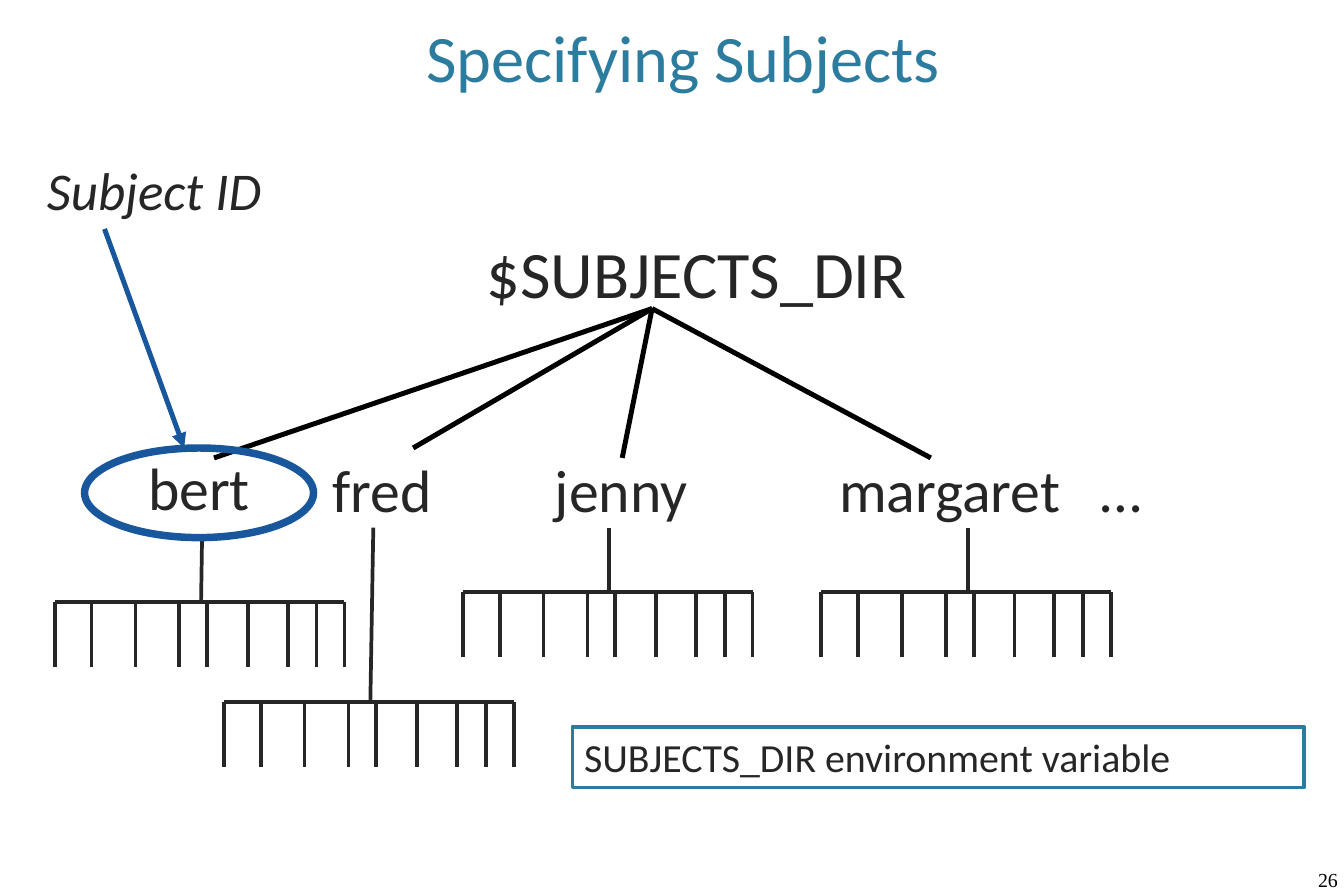
from dataclasses import dataclass

from lxml.etree import SubElement
from pptx import Presentation
from pptx.dml.color import RGBColor as RGB
from pptx.enum.shapes import MSO_CONNECTOR as LINK, MSO_SHAPE as SHAPE
from pptx.enum.text import MSO_ANCHOR as ANCHOR, PP_ALIGN as ALIGN
from pptx.oxml.ns import qn
from pptx.util import Pt


@dataclass(frozen=True)
class Theme:
    font: str = "Calibri"
    serif: str = "Times New Roman"
    ink: str = "262626"
    black: str = "000000"
    teal: str = "2C7C9F"
    blue: str = "18579B"
    head: int = 40
    name: int = 36
    label: int = 32
    note: int = 24
    page: int = 12


theme = Theme()
PX = 7620

deck = Presentation()
deck.slide_width, deck.slide_height = 1350 * PX, 900 * PX
slide = deck.slides.add_slide(deck.slide_layouts[6])
shapes = slide.shapes


def write(text, box=None, frame=None, size=theme.name, color=theme.ink,
          font=theme.font, align=ALIGN.CENTER, italic=False, pad=(0, 0)):
    if frame is None:
        frame = shapes.add_textbox(*[n * PX for n in box]).text_frame
    frame.word_wrap = True
    frame.vertical_anchor = ANCHOR.TOP
    frame.margin_left = frame.margin_right = pad[0] * PX
    frame.margin_top = frame.margin_bottom = pad[1] * PX
    para = frame.paragraphs[0]
    para.alignment = align
    run = para.add_run()
    run.text = text
    run.font.size = Pt(size)
    run.font.name = font
    run.font.italic = italic
    run.font.color.rgb = RGB.from_string(color)


def draw(x1, y1, x2, y2, color=theme.ink, width=2.25):
    link = shapes.add_connector(LINK.STRAIGHT, x1 * PX, y1 * PX, x2 * PX, y2 * PX)
    link.line.color.rgb = RGB.from_string(color)
    link.line.width = Pt(width)
    SubElement(link._element.spPr, qn("a:effectLst"))
    return link


write("26", (1324, 871, 26, 25), size=theme.page, color=theme.black,
      font=theme.serif, align=ALIGN.LEFT)
write("Specifying Subjects", (236, 16, 900, 82), size=theme.head, color=theme.teal)
write("$SUBJECTS_DIR", (395, 233, 610, 82), size=theme.head)

names = [("bert", 200, 453), ("fred", 384, 455), ("jenny", 624, 455),
         ("margaret   …", 995, 455)]
for name, mid, top in names:
    write(name, (mid - 200, top, 400, 74))

for x, y in [(215, 460), (415, 450), (625, 460), (935, 460)]:
    draw(655, 310, x, y, theme.black, 3)

ticks = [0, 37, 81, 125, 153, 194, 234, 263, 291]
trees = [(55, 605, 203, 540), (465, 595, 612, 530),
         (825, 595, 972, 530), (225, 705, 375, 530)]
for left, bar, x, y in trees:
    draw(x, y, left + 147, bar)
    draw(left, bar, left + ticks[-1], bar)
    for tick in ticks:
        draw(left + tick, bar, left + tick, bar + 65)

ring = shapes.add_shape(SHAPE.OVAL, 85 * PX, 450 * PX, 230 * PX, 90 * PX)
frame = shapes.add_shape(SHAPE.RECTANGLE, 575 * PX, 730 * PX, 735 * PX, 61 * PX)
for shape, color, width in [(ring, theme.blue, 4.5), (frame, theme.teal, 2.25)]:
    shape.shadow.inherit = False
    shape.fill.background()
    shape.line.color.rgb = RGB.from_string(color)
    shape.line.width = Pt(width)

write("SUBJECTS_DIR environment variable", frame=frame.text_frame,
      size=theme.note, align=ALIGN.LEFT, pad=(12, 6))

arrow = draw(105, 230, 185, 450, theme.blue, 3)
SubElement(arrow.line._get_or_add_ln(), qn("a:tailEnd"), type="triangle")
write("Subject ID", (47, 158, 270, 66), size=theme.label, align=ALIGN.LEFT,
      italic=True)

deck.save("out.pptx")
